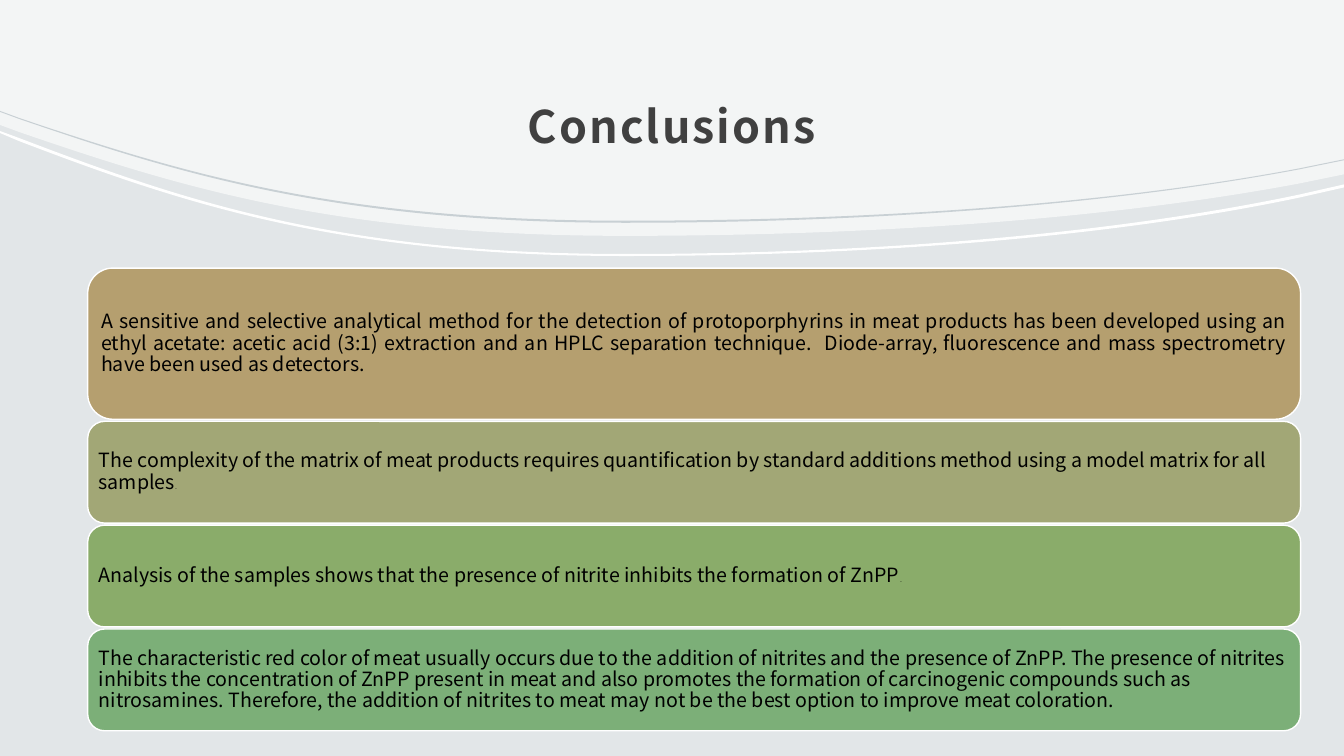
from lxml import etree
from pptx import Presentation
from pptx import util as u
from pptx.dml.color import RGBColor
from pptx.enum import shapes, text

FONT = "Noto Sans CJK JP"
WIDE, HIGH = 13.33, 7.5
TITLE = "Conclusions"
LEFT, TOP, SPAN, GAP, PAD = 0.87, 2.66, 12.03, 0.02, 0.06

# height, fill, alignment, text, small closing mark
CARDS = [
    (1.5, "B59F6F", "JUSTIFY",
     "A sensitive and selective analytical method for the detection of "
     "protoporphyrins in meat products has been developed using an ethyl "
     "acetate: acetic acid (3:1) extraction and an HPLC separation "
     "technique.  Diode-array, fluorescence and mass spectrometry have "
     "been used as detectors.", ""),
    (1.01, "A2A776", "LEFT",
     "The complexity of the matrix of meat products requires quantification "
     "by standard additions method using a model matrix for all samples", "."),
    (1.01, "8AAC6A", "LEFT",
     "Analysis of the samples shows that the presence of nitrite inhibits "
     "the formation of ZnPP", "."),
    (1.01, "7CAF78", "LEFT",
     "The characteristic red color of meat usually occurs due to the "
     "addition of nitrites and the presence of ZnPP. The presence of "
     "nitrites inhibits the concentration of ZnPP present in meat and also "
     "promotes the formation of carcinogenic compounds such as "
     "nitrosamines. Therefore, the addition of nitrites to meat may not be "
     "the best option to improve meat coloration.", ""),
]

# Each wave is a line, two Bézier curves and a line over these x positions
WAVE_X = [0, 0.19, 1.79, 3.33, 6.2, 8.75, 11.09, 12.89, WIDE]
# fill, opacity in percent, upper edge (none: top of the slide), lower edge
BANDS = [
    ("FFFFFF", 60, None,
     [1.24, 1.31, 1.86, 2.34, 2.34, 2.34, 2.16, 1.82, 1.73]),
    ("FFFFFF", 100,
     [1.3, 1.37, 1.98, 2.52, 2.52, 2.52, 2.31, 1.93, 1.83],
     [1.32, 1.4, 2.01, 2.54, 2.54, 2.54, 2.34, 1.96, 1.86]),
    ("C8D0D4", 100,
     [1.1, 1.17, 1.71, 2.19, 2.19, 2.19, 2.01, 1.67, 1.58],
     [1.11, 1.18, 1.73, 2.21, 2.21, 2.21, 2.02, 1.68, 1.59]),
]


def paint(fill, tint):
    fill.solid()
    fill.fore_color.rgb = RGBColor.from_string(tint)


def bend(lines):
    """Merge three line segments into one Bézier curve."""
    first = lines[0]
    space = etree.QName(first).namespace
    curve = etree.Element("{%s}cubicBezTo" % space)
    first.addprevious(curve)
    for line in lines:
        curve.append(line[0])
        line.getparent().remove(line)


def add_band(slide, tint, alpha, upper, lower):
    top = list(zip(WAVE_X, upper)) if upper else [(0, 0), (WIDE, 0)]
    knots = top + list(zip(WAVE_X, lower))[::-1]
    points = [(u.Inches(x), u.Inches(y)) for x, y in knots]
    pen = slide.shapes.build_freeform(*points[0], scale=1)
    pen.add_line_segments(points[1:], close=True)
    band = pen.convert_to_shape()
    lines = band._element.findall(".//{*}lnTo")
    starts = [len(lines) - 7, len(lines) - 4] + ([1, 4] if upper else [])
    for start in starts:
        bend(lines[start:start + 3])
    band.shadow.inherit = False
    band.line.fill.background()
    paint(band.fill, tint)
    if alpha < 100:
        color = band._element.spPr.find(".//{*}srgbClr")
        space = etree.QName(color).namespace
        etree.SubElement(color, "{%s}alpha" % space, val=str(alpha * 1000))


def set_frame(frame, pads):
    frame.word_wrap = True
    frame.auto_size = text.MSO_AUTO_SIZE.NONE
    frame.vertical_anchor = text.MSO_ANCHOR.MIDDLE
    for side, pad in zip(("left", "top", "right", "bottom"), pads):
        setattr(frame, "margin_" + side, u.Inches(pad))


def add_run(para, words, size, tint, bold=False):
    run = para.add_run()
    run.text = words
    for name, value in dict(name=FONT, size=u.Pt(size), bold=bold).items():
        setattr(run.font, name, value)
    run.font.color.rgb = RGBColor.from_string(tint)
    return run


def place_title(slide):
    title = slide.shapes.title
    box = dict(left=0.1 * WIDE, top=0.59, width=0.8 * WIDE, height=1.14)
    for name, value in box.items():
        setattr(title, name, u.Inches(value))
    set_frame(title.text_frame, (0.12, 0.12, 0.12, 0.1))
    para = title.text_frame.paragraphs[0]
    para.alignment = text.PP_ALIGN.CENTER
    para.line_spacing = 1.3
    run = add_run(para, TITLE, 32, "404040", True)
    run.font._element.set("spc", "150")
    slide.shapes._spTree.append(title._element)  # in front of the waves


def add_card(slide, top, high, tint, align, words, mark):
    card = slide.shapes.add_shape(
        shapes.MSO_SHAPE.ROUNDED_RECTANGLE,
        *map(u.Inches, (LEFT, top, SPAN, high)))
    card.shadow.inherit = False
    paint(card.fill, tint)
    paint(card.line.fill, "FFFFFF")
    card.line.width = u.Pt(1)
    set_frame(card.text_frame, [PAD] * 4)
    para = card.text_frame.paragraphs[0]
    para.alignment = getattr(text.PP_ALIGN, align)
    para.line_spacing = 0.9
    add_run(para, words, 14, "000000")
    if mark:
        add_run(para, mark, 5, "000000")


def main():
    deck = Presentation()
    deck.slide_width, deck.slide_height = u.Inches(WIDE), u.Inches(HIGH)
    slide = deck.slides.add_slide(deck.slide_layouts[5])
    paint(slide.background.fill, "E2E6E8")
    for band in BANDS:
        add_band(slide, *band)
    place_title(slide)
    top = TOP
    for card in CARDS:
        add_card(slide, top, *card)
        top += card[0] + GAP
    deck.save("out.pptx")


if __name__ == "__main__":
    main()
